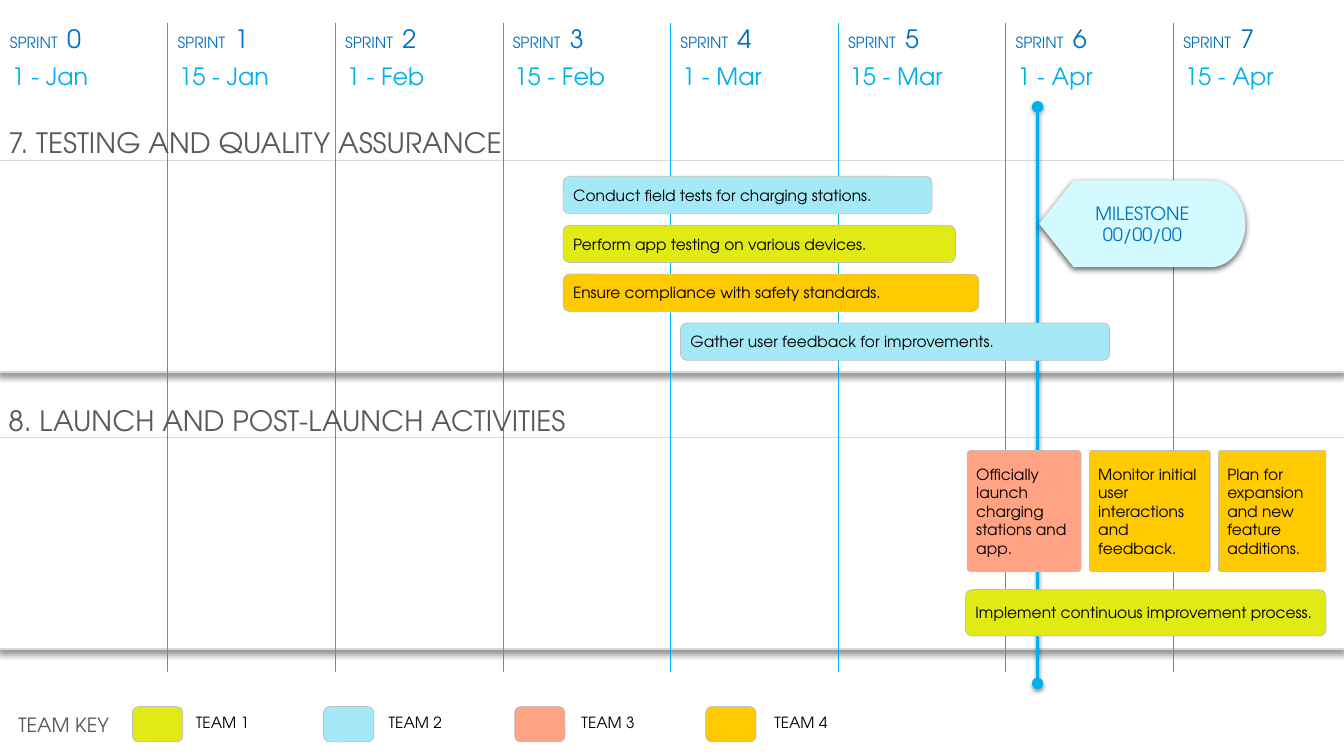
from lxml.etree import SubElement
from pptx import Presentation
from pptx.dml.color import RGBColor
from pptx.enum.shapes import MSO_CONNECTOR, MSO_SHAPE
from pptx.enum.text import MSO_ANCHOR, MSO_AUTO_SIZE, PP_ALIGN
from pptx.oxml.ns import qn
from pptx.util import Inches, Pt

COLORS = {
    "lime": "E1EA15", "aqua": "A5E9F7", "coral": "FFA384", "amber": "FFCA00",
    "white": "FFFFFF", "pale": "D3FBFF", "panel edge": "D9D9D9", "task edge": "BFBFBF",
    "sky": "00B0F0", "blue": "0070C0", "gray": "595959", "black": "000000",
}
TEAMS = ["lime", "aqua", "coral", "amber"]
DATES = ["1 - Jan", "15 - Jan", "1 - Feb", "15 - Feb",
         "1 - Mar", "15 - Mar", "1 - Apr", "15 - Apr"]
SECTIONS = [(3.18, "7. TESTING AND QUALITY ASSURANCE"),
            (8.68, "8. LAUNCH AND POST-LAUNCH ACTIVITIES")]
TESTING = [  # first column, columns wide, color, task
    (3.36, 2.2, "aqua", "Conduct field tests for charging stations."),
    (3.36, 2.34, "lime", "Perform app testing on various devices."),
    (3.36, 2.48, "amber", "Ensure compliance with safety standards."),
    (4.06, 2.56, "aqua", "Gather user feedback for improvements."),
]
LAUNCH = [  # first column, columns wide, color, corner, task
    (5.77, 0.68, "coral", 0.03, "Officially launch charging stations and app."),
    (6.5, 0.72, "amber", 0.02, "Monitor initial user interactions and feedback."),
    (7.27, 0.64, "amber", 0.02, "Plan for expansion and new feature additions."),
]


class Roadmap:
    """Draws on one slide; positions count sprint columns and half-inch rows."""
    COLUMN, ROW = Inches(1.6625), Inches(0.5)
    FONT = "TeX Gyre Adventor"

    def __init__(self, slide):
        self.shapes = slide.shapes

    def place(self, *lengths):
        """Turn alternating columns and rows into slide units."""
        return [round(length * (self.ROW if i % 2 else self.COLUMN))
                for i, length in enumerate(lengths)]

    def color(self, name):
        return RGBColor.from_string(COLORS[name])

    def style_font(self, font, size, color):
        font.name, font.size = self.FONT, Pt(size)
        font.color.rgb = self.color(color)

    def set_text(self, frame, text, size, color, align=PP_ALIGN.LEFT):
        frame.text = text
        for paragraph in frame.paragraphs:
            paragraph.alignment = align
            for run in paragraph.runs:
                self.style_font(run.font, size, color)

    def inset(self, frame, left=0, right=0):
        """Center the text vertically with side margins only."""
        frame.vertical_anchor = MSO_ANCHOR.MIDDLE
        frame.margin_left, frame.margin_right = Inches(left), Inches(right)
        frame.margin_top = frame.margin_bottom = 0

    def shadow(self, item, opacity, blur, distance):
        """Give the item a black shadow straight below it."""
        properties = item.element.spPr
        effects = properties.find(qn("a:effectLst"))
        outer = SubElement(effects, qn("a:outerShdw"), blurRad=str(Pt(blur)),
                           dist=str(Pt(distance)), dir="5400000",
                           algn="t", rotWithShape="0")
        black = SubElement(outer, qn("a:srgbClr"), val=COLORS["black"])
        SubElement(black, qn("a:alpha"), val=str(opacity * 1000))

    def block(self, kind, box, fill, edge=None, width=0.5, corner=None):
        item = self.shapes.add_shape(kind, *self.place(*box))
        item.shadow.inherit = False
        item.fill.solid()
        item.fill.fore_color.rgb = self.color(fill)
        if edge:
            item.line.color.rgb = self.color(edge)
            item.line.width = Pt(width)
        else:
            item.line.fill.background()
        if corner is not None:
            item.adjustments[0] = corner
        return item

    def task(self, box, fill, corner, text):
        item = self.block(MSO_SHAPE.ROUNDED_RECTANGLE, box, fill, "task edge", corner=corner)
        item.text_frame.word_wrap = True
        self.inset(item.text_frame, 0.08, 0.05)
        self.set_text(item.text_frame, text, 11, "black")

    def label(self, box, text, size, color, wrap=True):
        frame = self.shapes.add_textbox(*self.place(*box)).text_frame
        frame.word_wrap = wrap
        frame.auto_size = MSO_AUTO_SIZE.SHAPE_TO_FIT_TEXT
        self.set_text(frame, text, size, color)
        return frame

    def vertical(self, column, top, bottom, width):
        rule = self.shapes.add_connector(
            MSO_CONNECTOR.STRAIGHT, *self.place(column, top, column, bottom))
        rule.line.color.rgb = self.color("sky")
        rule.line.width = Pt(width)
        SubElement(rule.element.spPr, qn("a:effectLst"))
        return rule

    def panel(self, top):
        item = self.block(MSO_SHAPE.RECTANGLE, (-0.01, top, 8.03, 4.2),
                          "white", "panel edge", 1)
        self.shadow(item, 40, 4, 3)

    def milestone(self, column, text):
        marker = self.vertical(column, 2.12, 13.56, 2.75)
        for end in ("a:headEnd", "a:tailEnd"):
            SubElement(marker.element.spPr.find(qn("a:ln")), qn(end), type="oval")
        self.shadow(marker, 38, 3.1, 1.6)
        flag = self.block(MSO_SHAPE.FLOWCHART_DISPLAY,
                          (column + 0.01, 3.58, 1.23, 1.72), "pale")
        self.shadow(flag, 63, 4.5, 1.5)
        self.inset(flag.text_frame)
        self.set_text(flag.text_frame, text, 13, "blue", PP_ALIGN.CENTER)

    def sprint(self, number, date):
        heading = self.label((number, 0.2, 1, 1), "SPRINT", 11, "blue").paragraphs[0]
        for text, size in ((" ", 24), (str(number), 18)):
            run = heading.add_run()
            run.text = text
            self.style_font(run.font, size, "blue")
        self.inset(self.label((number + 0.01, 1.22, 1, 0.58), date, 17, "sky"), 0.1)

    def team_key(self):
        for i, team in enumerate(TEAMS):
            self.block(MSO_SHAPE.ROUNDED_RECTANGLE, (0.79 + 1.14 * i, 14.02, 0.3, 0.7),
                       team, "task edge")
            self.label((1.11 + 1.15 * i, 14.06, 0.44, 0.58), f"TEAM {i + 1}",
                       11, "black", wrap=False)
        self.label((0.05, 14.04, 0.67, 0.68), "TEAM KEY", 14, "gray", wrap=False)


def main():
    deck = Presentation()
    deck.slide_width, deck.slide_height = Inches(13.33), Inches(7.5)
    roadmap = Roadmap(deck.slides.add_slide(deck.slide_layouts[6]))

    for top, _ in reversed(SECTIONS):
        roadmap.panel(top)
    for column in range(1, len(DATES)):
        roadmap.vertical(column, 0.46, 13.34, 0.5)
    roadmap.milestone(6.19, "MILESTONE\n00/00/00")
    for number, date in enumerate(DATES):
        roadmap.sprint(number, date)
    for top, title in SECTIONS:
        heading = roadmap.label((-0.01, top - 0.88, 4.81, 0.92), title, 20, "gray")
        heading.paragraphs[0].line_spacing = 1.15
    roadmap.team_key()

    for i, (start, span, team, text) in enumerate(TESTING):
        roadmap.task((start, 3.5 + 0.97 * i, span, 0.74), team, 0.17, text)
    for start, span, team, corner, text in LAUNCH:
        roadmap.task((start, 8.94, span, 2.4), team, corner, text)
    roadmap.task((5.76, 11.7, 2.15, 0.92), "lime", 0.14,
                 "Implement continuous improvement process.")
    deck.save("out.pptx")


if __name__ == "__main__":
    main()
